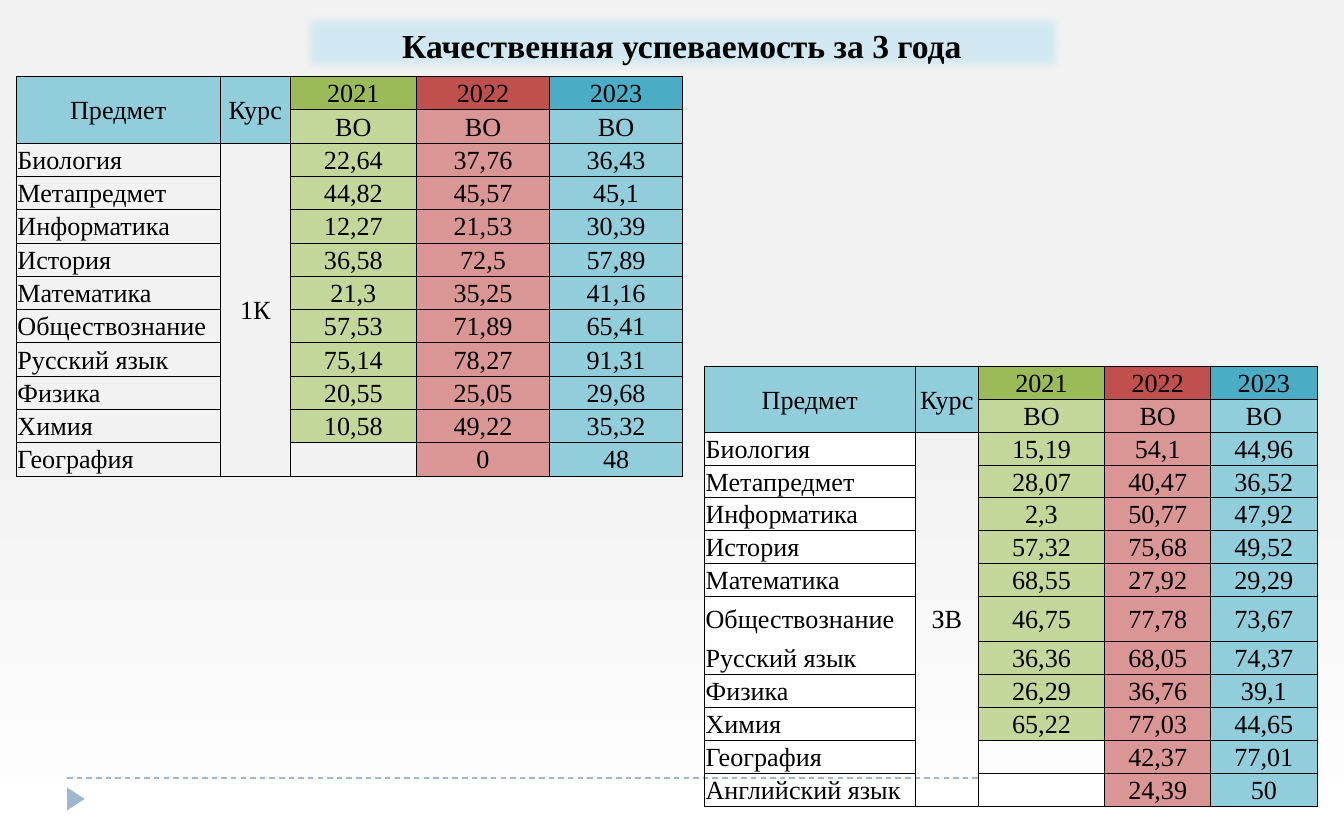
from lxml import etree
from pptx import Presentation
from pptx.dml.color import RGBColor
from pptx.enum.dml import MSO_LINE
from pptx.enum.shapes import MSO_CONNECTOR, MSO_SHAPE
from pptx.enum.text import MSO_ANCHOR, PP_ALIGN
from pptx.oxml.ns import qn
from pptx.util import Inches, Pt

LEFT, CENTER = PP_ALIGN.LEFT, PP_ALIGN.CENTER
TOP, MIDDLE = MSO_ANCHOR.TOP, MSO_ANCHOR.MIDDLE
TRIANGLE = MSO_SHAPE.ISOSCELES_TRIANGLE
STRAIGHT = MSO_CONNECTOR.STRAIGHT
DASH = MSO_LINE.DASH
TITLE_ONLY = 5
COLUMNS, ROWS = 100, 62.5

COLORS = {
    "text": "000000", "accent": "9FB8CD", "banner": "00B0F0",
    "top": "F2F2F2", "bottom": "FFFFFF", "white": "FFFFFF", "heading": "92CDDC",
    "2021": "9BBB59", "2022": "C0504D", "2023": "4BACC6",
    "2021 light": "C4D79B", "2022 light": "DA9694", "2023 light": "92CDDC",
}
YEARS = ("2021", "2022", "2023")

FIRST_COURSE = [
    ("Биология", "22,64", "37,76", "36,43"),
    ("Метапредмет", "44,82", "45,57", "45,1"),
    ("Информатика", "12,27", "21,53", "30,39"),
    ("История", "36,58", "72,5", "57,89"),
    ("Математика", "21,3", "35,25", "41,16"),
    ("Обществознание", "57,53", "71,89", "65,41"),
    ("Русский язык", "75,14", "78,27", "91,31"),
    ("Физика", "20,55", "25,05", "29,68"),
    ("Химия", "10,58", "49,22", "35,32"),
    ("География", "", "0", "48"),
]
THIRD_COURSE = [
    ("Биология", "15,19", "54,1", "44,96"),
    ("Метапредмет", "28,07", "40,47", "36,52"),
    ("Информатика", "2,3", "50,77", "47,92"),
    ("История", "57,32", "75,68", "49,52"),
    ("Математика", "68,55", "27,92", "29,29"),
    ("Обществознание", "46,75", "77,78", "73,67"),
    ("Русский язык", "", "", ""),
    ("", "36,36", "68,05", "74,37"),
    ("Физика", "26,29", "36,76", "39,1"),
    ("Химия", "65,22", "77,03", "44,65"),
    ("География", "", "42,37", "77,01"),
    ("Английский язык", "", "24,39", "50"),
]


def rgb(name):
    return RGBColor.from_string(COLORS[name])


class GradeSlide:
    font = "Times New Roman"

    def __init__(self, deck):
        self.column = deck.slide_width / COLUMNS
        self.row = deck.slide_height / ROWS
        self.slide = deck.slides.add_slide(deck.slide_layouts[TITLE_ONLY])
        self.shapes = self.slide.shapes

    def x(self, columns):
        return round(columns * self.column)

    def y(self, rows):
        return round(rows * self.row)

    def box(self, left, top, width, height):
        return self.x(left), self.y(top), self.x(width), self.y(height)

    def background(self):
        fill = self.slide.background.fill
        fill.gradient()
        fill.gradient_angle = 270
        for stop, position, name in zip(fill.gradient_stops, (0.5, 1), ("top", "bottom")):
            stop.position = position
            stop.color.rgb = rgb(name)

    def style_runs(self, paragraph, size, bold=False):
        for run in paragraph.runs:
            run.font.name = self.font
            run.font.size = Pt(size)
            run.font.bold = bold
            run.font.color.rgb = rgb("text")

    def title(self, text, *place):
        """Fill the title placeholder, on a translucent band with soft edges."""
        title = self.shapes.title
        title.left, title.top, title.width, title.height = self.box(*place)
        title.fill.solid()
        title.fill.fore_color.rgb = rgb("banner")
        properties = title._element.spPr
        color = properties.find(qn("a:solidFill")).find(qn("a:srgbClr"))
        etree.SubElement(color, qn("a:alpha"), val="14000")
        effects = etree.SubElement(properties, qn("a:effectLst"))
        etree.SubElement(effects, qn("a:softEdge"), rad="63500")
        frame = title.text_frame
        frame.text = text
        frame.word_wrap = True
        frame.vertical_anchor = TOP
        paragraph = frame.paragraphs[0]
        paragraph.alignment = CENTER
        paragraph.line_spacing = 1.15
        paragraph.space_after = Pt(10)
        self.style_runs(paragraph, 18, bold=True)

    def dashed_line(self, left, right, height):
        line = self.shapes.add_connector(
            STRAIGHT, self.x(left), self.y(height), self.x(right), self.y(height))
        line.line.color.rgb = rgb("accent")
        line.line.width = Pt(0.75)
        line.line.dash_style = DASH
        etree.SubElement(line._element.spPr, qn("a:effectLst"))

    def marker(self, *place):
        marker = self.shapes.add_shape(TRIANGLE, *self.box(*place))
        marker.rotation = 90
        marker.shadow.inherit = False
        marker.fill.solid()
        marker.fill.fore_color.rgb = rgb("accent")
        marker.line.fill.background()

    def cell(self, cell, text, fill, align):
        cell.text = text
        cell.vertical_anchor = MIDDLE
        cell.margin_left = cell.margin_right = cell.margin_top = Inches(0.01)
        cell.margin_bottom = 0
        paragraph = cell.text_frame.paragraphs[0]
        paragraph.alignment = align
        self.style_runs(paragraph, 14)
        if not text:
            etree.SubElement(paragraph._p, qn("a:endParaRPr"), sz="1400")
        properties = cell._tc.get_or_add_tcPr()
        for side in ("lnL", "lnR", "lnT", "lnB"):
            border = etree.SubElement(properties, qn(f"a:{side}"), w=str(Pt(0.5)))
            solid = etree.SubElement(border, qn("a:solidFill"))
            etree.SubElement(solid, qn("a:srgbClr"), val=COLORS["text"])
        if fill:
            cell.fill.solid()
            cell.fill.fore_color.rgb = rgb(fill)
        else:
            cell.fill.background()

    def grades(self, course, records, left, top, widths, heights,
               subject_fill=None, fills=None, merges=()):
        """Draw a table of grades; fills overrides cells, merges lists (column, first, last)."""
        lines = [("Предмет", "Курс", *YEARS), ("", "", "ВО", "ВО", "ВО")]
        lines += [(subject, "", *values) for subject, *values in records]
        lines[2] = (lines[2][0], course, *lines[2][2:])
        table = self.shapes.add_table(
            len(lines), len(widths),
            *self.box(left, top, sum(widths), sum(heights))).table
        table.first_row = table.horz_banding = False
        for column, width in zip(table.columns, widths):
            column.width = self.x(width)
        for row, height in zip(table.rows, heights):
            row.height = self.y(height)
        for r, line in enumerate(lines):
            for c, text in enumerate(line):
                if c < 2:
                    fill = "heading" if r < 2 else (None if c else subject_fill)
                else:
                    fill = YEARS[c - 2] + (" light" if r else "") if text else None
                fill = (fills or {}).get((r, c), fill)
                self.cell(table.cell(r, c), text, fill, LEFT if r > 1 and c == 0 else CENTER)
        for c, first, last in ((0, 0, 1), (1, 0, 1), (1, 2, len(lines) - 1), *merges):
            table.cell(first, c).merge(table.cell(last, c))


def main():
    deck = Presentation()
    deck.slide_width, deck.slide_height = Inches(10), Inches(6.25)
    page = GradeSlide(deck)
    page.background()
    page.dashed_line(5, 95, 57.9)
    page.marker(4.8, 58.8, 1.7, 1.3)
    page.title("Качественная успеваемость за 3 года", 22.4, 0.9, 56.7, 4.5)
    page.grades("1К", FIRST_COURSE, 1.2, 5.7, (15.2, 5.2, 9.4, 9.9, 9.9), [2.48] * 12)
    page.grades(
        "ЗВ", THIRD_COURSE, 52.4, 27.3, (15.7, 4.7, 9.4, 7.9, 7.9),
        [2.44] * 7 + [3.4, 0] + [2.44] * 5,
        subject_fill="white", fills={(13, 0): None, (13, 2): "white"},
        merges=[(0, 8, 9)] + [(c, 7, 8) for c in (2, 3, 4)])
    deck.save("out.pptx")


if __name__ == "__main__":
    main()
